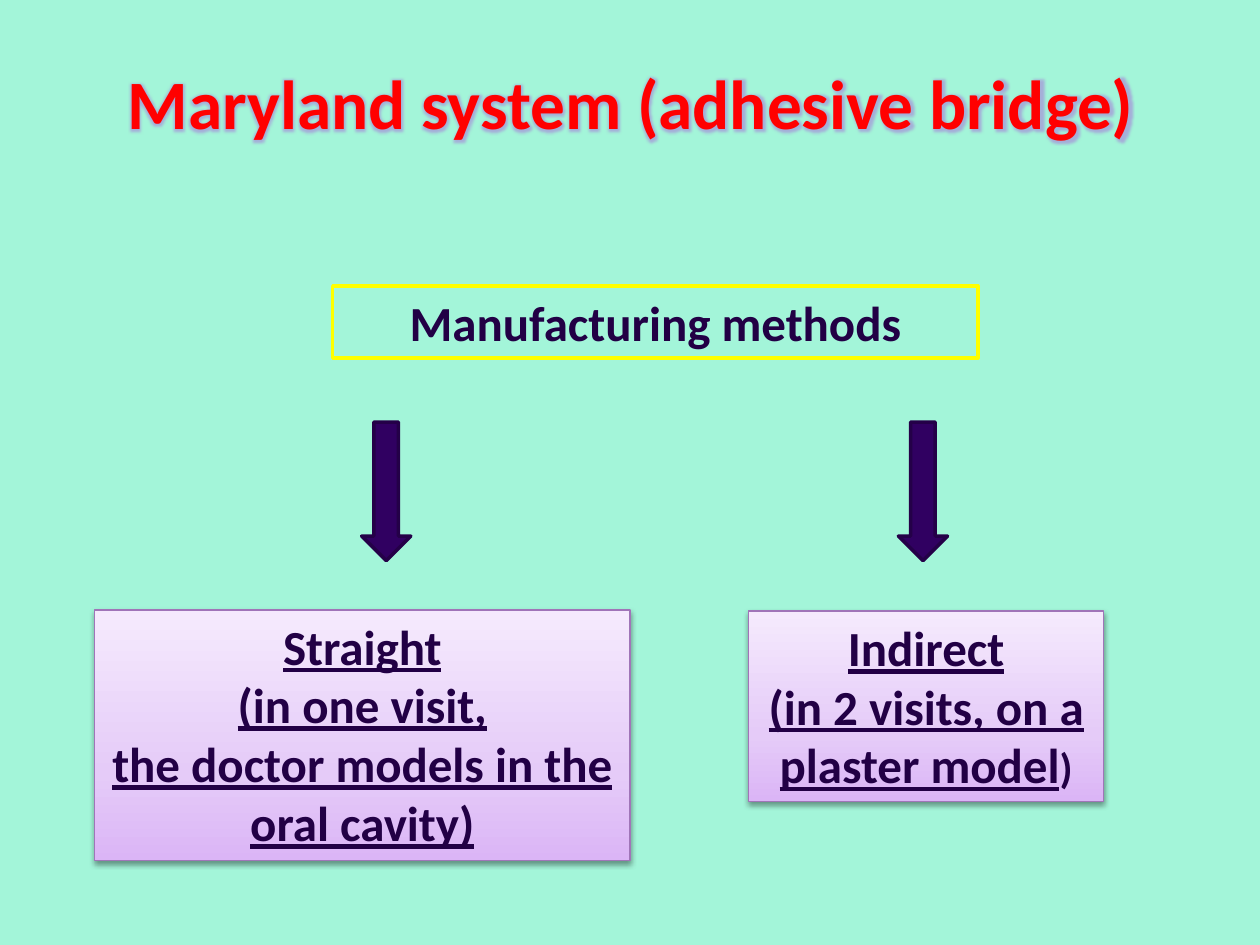
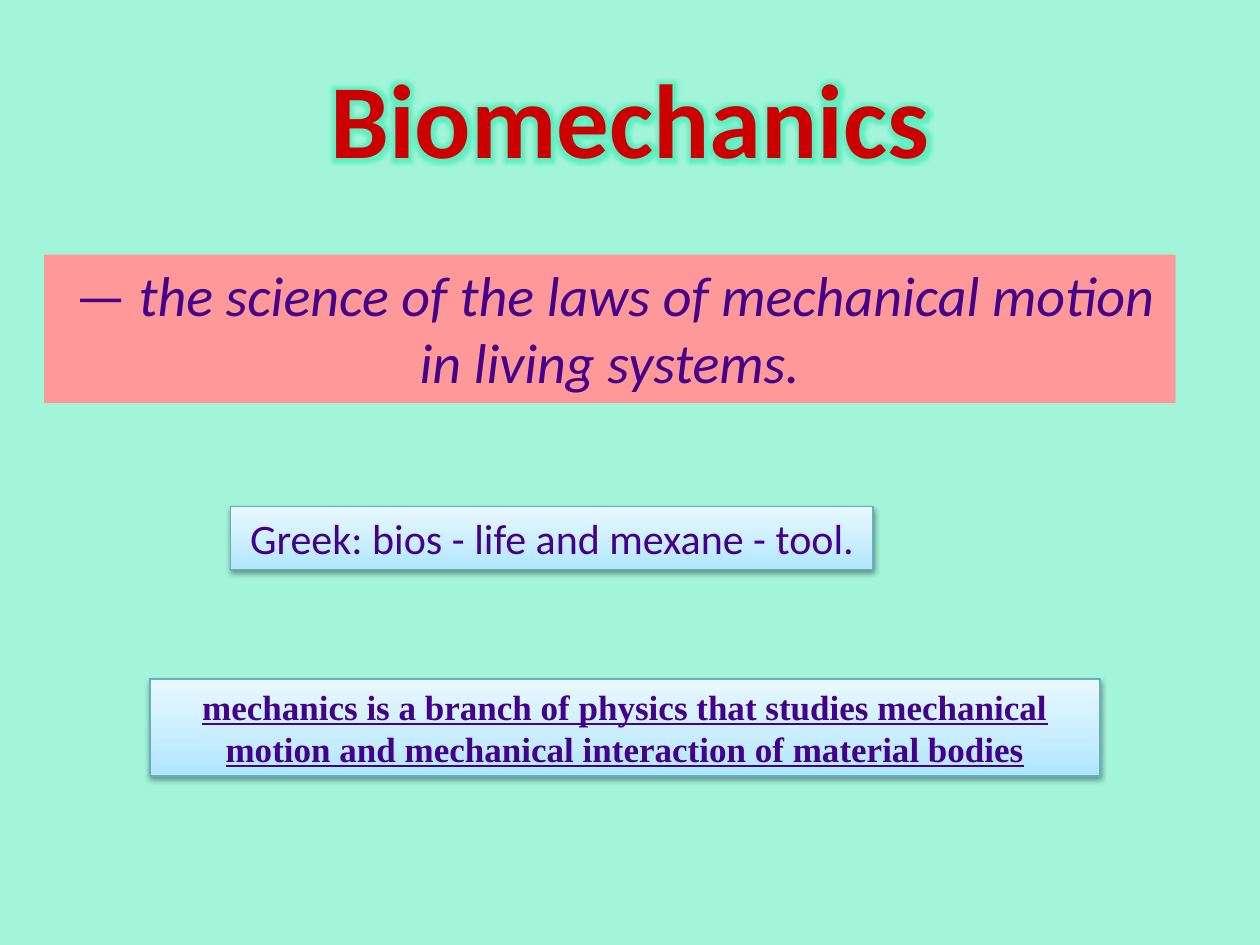
"""Build two dental slides: adhesive bridge methods and biomechanics."""
import copy
from dataclasses import dataclass

import pptx
import pptx.dml.color
import pptx.enum.shapes
import pptx.enum.text
import pptx.oxml
import pptx.oxml.ns
import pptx.util
from pptx.util import Inches

SHAPE = pptx.enum.shapes.MSO_SHAPE
ALIGN = pptx.enum.text.PP_ALIGN
ANCHOR = pptx.enum.text.MSO_ANCHOR
AUTO = pptx.enum.text.MSO_AUTO_SIZE


@dataclass(frozen=True)
class Theme:
    font: str = "Calibri"
    serif: str = "Times New Roman"
    background: str = "A3F5D9"
    dark: str = "220045"
    violet: str = "44008A"
    yellow: str = "FFFF00"
    pink: str = "FF9999"
    arrow: str = "300061"
    arrow_line: str = "240048"
    lilac: tuple = ("DBB5F6", "E5CBF8", "F5EAFD")
    lilac_line: str = "A075B8"
    sky: tuple = ("AEE6FF", "C6EDFF", "E9F8FF")
    sky_line: str = "66AEC7"
    heading: int = 28
    lead: int = 32
    body: int = 24
    note: int = 20


T = Theme()
STOPS = (0, 0.35, 1)

TITLES = [
    dict(text="Maryland system (adhesive bridge)", at=(0.51, 0.03, 9, 1.56),
         size=39.6, color="FF0000", glow=("A5AFD8", 5)),
    dict(text="Biomechanics", at=(0.5, 0.3, 9, 1.25),
         size=60, color="CC0000", glow=("5EEFC0", 8)),
]

METHODS = ("Manufacturing methods", (2.64, 2.27, 5.12, 0.57))
ARROW_LEFTS = (2.87, 7.13)
METHOD_CARDS = [
    ((0.75, 4.84, 4.25, 1.99),
     [["Straight"], ["(in one visit,"], ["the doctor models in the oral cavity)"]]),
    ((5.94, 4.85, 2.82, 1.51),
     [["Indirect"],
      ["(in 2 visits, on a plaster model", (")", dict(size=T.body, underline=False))]]),
]

GREEK = ((1.83, 4.02, 5.1, 0.5),
         [[(" ", dict(size=18)), "Greek: bios - life and mexane - tool."]])
MECHANICS = ((1.19, 5.39, 7.54, 0.77),
             [["mechanics is a branch of physics that studies mechanical motion "
               "and mechanical interaction of material bodies"]])
DEFINITION = ((0.35, 2.02, 8.98, 1.18),
              [[(" ", dict(size=T.heading)), ("— ", dict(italic=False)),
                "the science of the laws of mechanical motion in living systems."]])


def rgb(value):
    return pptx.dml.color.RGBColor.from_string(value)


def effect(kind, attrs, color, alpha):
    """Return a glow or shadow element."""
    return pptx.oxml.parse_xml(
        f'<a:{kind} {pptx.oxml.ns.nsdecls("a")} {attrs}><a:srgbClr val="{color}">'
        f'<a:alpha val="{alpha * 1000}"/></a:srgbClr></a:{kind}>')


def add_glow(r, color, radius):
    """Put a glow behind the letters of a run."""
    effects = pptx.oxml.parse_xml(f'<a:effectLst {pptx.oxml.ns.nsdecls("a")}/>')
    effects.append(effect("glow", f'rad="{pptx.util.Pt(radius)}"', color, 100))
    r.font.fill._xPr.find(pptx.oxml.ns.qn("a:solidFill")).addnext(effects)


def write(sp, paragraphs, size=T.heading, color=T.dark, font=T.font, bold=False,
          italic=False, underline=False, align=ALIGN.CENTER, anchor=ANCHOR.TOP,
          wrap=True, auto=AUTO.SHAPE_TO_FIT_TEXT, glow=None):
    """Write paragraphs of runs; a run is text or (text, format changes)."""
    tf = sp.text_frame
    tf.word_wrap, tf.auto_size, tf.vertical_anchor = wrap, auto, anchor
    base = dict(size=size, italic=italic, underline=underline)
    for i, runs in enumerate(paragraphs):
        p = tf.paragraphs[0] if i == 0 else tf.add_paragraph()
        p.alignment = align
        for run in runs:
            text, changes = (run, {}) if isinstance(run, str) else run
            style = {**base, **changes}
            r = p.add_run()
            r.text = text
            r.font.size = pptx.util.Pt(style["size"])
            r.font.italic, r.font.underline = style["italic"], style["underline"]
            r.font.name, r.font.bold = font, bold
            r.font.color.rgb = rgb(color)
            if glow:
                add_glow(r, *glow)


def add_box(s, at, fill, line=None, width=2, kind=SHAPE.RECTANGLE):
    """Add a shape with a solid fill, or a gradient fill and a shadow."""
    sp = s.shapes.add_shape(kind, *map(Inches, at))
    sp.shadow.inherit = False
    if isinstance(fill, str):
        sp.fill.solid()
        sp.fill.fore_color.rgb = rgb(fill)
    else:
        sp.fill.gradient()
        sp.fill.gradient_angle = 90
        last = sp._element.spPr.findall(".//" + pptx.oxml.ns.qn("a:gs"))[-1]
        last.addnext(copy.deepcopy(last))
        for stop, position, color in zip(sp.fill.gradient_stops, STOPS, fill):
            stop.position, stop.color.rgb = position, rgb(color)
        sp._element.spPr.find(pptx.oxml.ns.qn("a:effectLst")).append(effect(
            "outerShdw", 'blurRad="40000" dist="20000" dir="5400000" rotWithShape="0"',
            "000000", 38))
    if line:
        sp.line.color.rgb = rgb(line)
        sp.line.width = pptx.util.Pt(width)
    else:
        sp.line.fill.background()
    return sp


def add_slide(prs, text, at, **style):
    """Add a blank slide with the shared title style."""
    s = prs.slides.add_slide(prs.slide_layouts[6])
    write(s.shapes.add_textbox(*map(Inches, at)), [[text]], bold=True,
          anchor=ANCHOR.MIDDLE, auto=AUTO.NONE, **style)
    return s


def build_methods(prs):
    s = add_slide(prs, **TITLES[0])
    text, at = METHODS
    write(add_box(s, at, T.background, T.yellow), [[text]], bold=True)
    for left in ARROW_LEFTS:
        add_box(s, (left, 3.35, 0.39, 1.1), T.arrow, T.arrow_line, kind=SHAPE.DOWN_ARROW)
    for at, paragraphs in METHOD_CARDS:
        write(add_box(s, at, T.lilac, T.lilac_line, 0.75), paragraphs,
              bold=True, underline=True)


def build_biomechanics(prs):
    s = add_slide(prs, **TITLES[1])
    for (at, paragraphs), style in (
            (GREEK, dict(size=T.body, align=ALIGN.LEFT, wrap=False)),
            (MECHANICS, dict(size=T.note, font=T.serif, bold=True, underline=True))):
        write(add_box(s, at, T.sky, T.sky_line, 0.75), paragraphs, color=T.violet, **style)
    at, paragraphs = DEFINITION
    write(add_box(s, at, T.pink), paragraphs, size=T.lead, color=T.violet, italic=True)


def main():
    prs = pptx.Presentation()
    prs.slide_width, prs.slide_height = Inches(10), Inches(7.5)
    fill = prs.slide_master.background.fill
    fill.solid()
    fill.fore_color.rgb = rgb(T.background)
    build_methods(prs)
    build_biomechanics(prs)
    prs.save("out.pptx")


if __name__ == "__main__":
    main()
